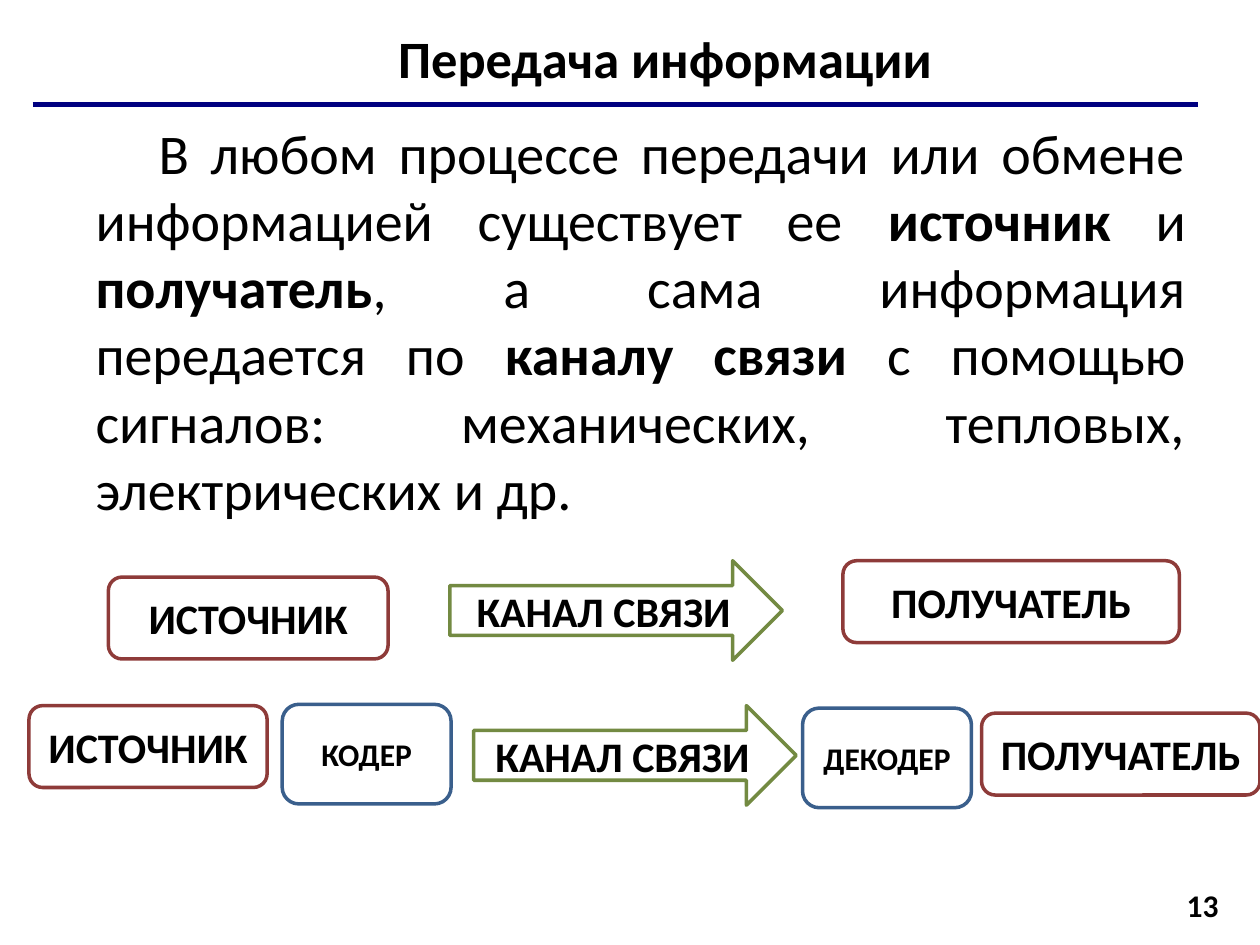
from lxml.etree import SubElement
from pptx import Presentation
from pptx.dml.color import RGBColor
from pptx.enum.shapes import MSO_CONNECTOR as Connector, MSO_SHAPE as Shape
from pptx.enum.text import MSO_ANCHOR as Anchor, PP_ALIGN as Align
from pptx.oxml.ns import qn
from pptx.util import Inches, Pt

FONT = "Calibri"
BLACK = "000000"
NAVY = "000080"
RED = "8E3B39"
GREEN = "738A42"
BLUE = "3A5F8C"

EXPLANATION = [
    ("В любом процессе передачи или обмене информацией существует ее ", False),
    ("источник", True),
    (" и ", False),
    ("получатель", True),
    (", а сама информация\vпередается по ", False),
    ("каналу связи", True),
    (" с помощью сигналов: механических, тепловых, электрических и др.", False),
]

BOX, ARROW = Shape.ROUNDED_RECTANGLE, Shape.RIGHT_ARROW
SIMPLE_SCHEME = [
    ("ИСТОЧНИК", BOX, RED, 24, (0.86, 4.58, 2.22, 0.65)),
    ("ПОЛУЧАТЕЛЬ", BOX, RED, 24, (6.69, 4.45, 2.67, 0.65)),
    ("КАНАЛ СВЯЗИ", ARROW, GREEN, 24, (3.57, 4.45, 2.64, 0.79)),
]
CODED_SCHEME = [
    ("ИСТОЧНИК", BOX, RED, 24, (0.23, 5.6, 1.89, 0.65)),
    ("ПОЛУЧАТЕЛЬ", BOX, RED, 24, (7.79, 5.66, 2.21, 0.65)),
    ("КАНАЛ СВЯЗИ", ARROW, GREEN, 24, (3.76, 5.6, 2.56, 0.79)),
    ("КОДЕР", BOX, BLUE, 18, (2.24, 5.59, 1.34, 0.79)),
    ("ДЕКОДЕР", BOX, BLUE, 18, (6.37, 5.62, 1.34, 0.79)),
]


def color(hex_value):
    """Turn a hex string into a colour."""
    return RGBColor.from_string(hex_value)


def style(paragraph, size, align, bold=None):
    """Set the alignment and font of a paragraph."""
    paragraph.alignment = align
    font = paragraph.font
    font.name, font.size, font.bold = FONT, Pt(size), bold
    font.color.rgb = color(BLACK)


def add_text(slide, place, size, align, text="", bold=None, anchor=Anchor.TOP):
    """Add a wrapping text box and return its paragraph."""
    frame = slide.shapes.add_textbox(*map(Inches, place)).text_frame
    frame.word_wrap = True
    frame.vertical_anchor = anchor
    paragraph = frame.paragraphs[0]
    paragraph.text = text
    style(paragraph, size, align, bold)
    return paragraph


def add_explanation(slide):
    """Add the justified paragraph with its bold terms."""
    paragraph = add_text(slide, (0.66, 0.89, 8.85, 3.33), 32, Align.JUSTIFY)
    paragraph._p.get_or_add_pPr().set("indent", str(Inches(0.5)))
    for words, bold in EXPLANATION:
        for position, part in enumerate(words.split("\v")):
            if position:
                paragraph.add_line_break()
            run = paragraph.add_run()
            run.text = part
            run.font.bold = bold


def add_rule(slide):
    """Add the line under the title."""
    rule = slide.shapes.add_connector(
        Connector.STRAIGHT, Inches(0.26), Inches(0.83), Inches(9.51), Inches(0.83))
    rule.line.color.rgb = color(NAVY)
    rule.line.width = Pt(3)
    SubElement(rule._element.spPr, qn("a:effectLst"))


def add_node(slide, label, kind, outline, size, place):
    """Add one outlined and labelled part of a scheme."""
    node = slide.shapes.add_shape(kind, *map(Inches, place))
    node.shadow.inherit = False
    node.fill.background()
    node.line.color.rgb = color(outline)
    node.line.width = Pt(2)
    frame = node.text_frame
    frame.word_wrap = False
    frame.vertical_anchor = Anchor.MIDDLE
    frame.text = label
    style(frame.paragraphs[0], size, Align.CENTER, True)


def main():
    """Build and save the slide."""
    deck = Presentation()
    deck.slide_width, deck.slide_height = Inches(10), Inches(7.5)
    slide = deck.slides.add_slide(deck.slide_layouts[6])
    add_rule(slide)
    add_text(slide, (0.83, 0.16, 8.9, 0.61), 30, Align.CENTER,
             "Передача информации", True)
    add_text(slide, (7.44, 6.98, 2.33, 0.4), 18, Align.RIGHT,
             "13", True, Anchor.MIDDLE)
    for node in SIMPLE_SCHEME + CODED_SCHEME:
        add_node(slide, *node)
    add_explanation(slide)
    deck.save("out.pptx")


if __name__ == "__main__":
    main()
